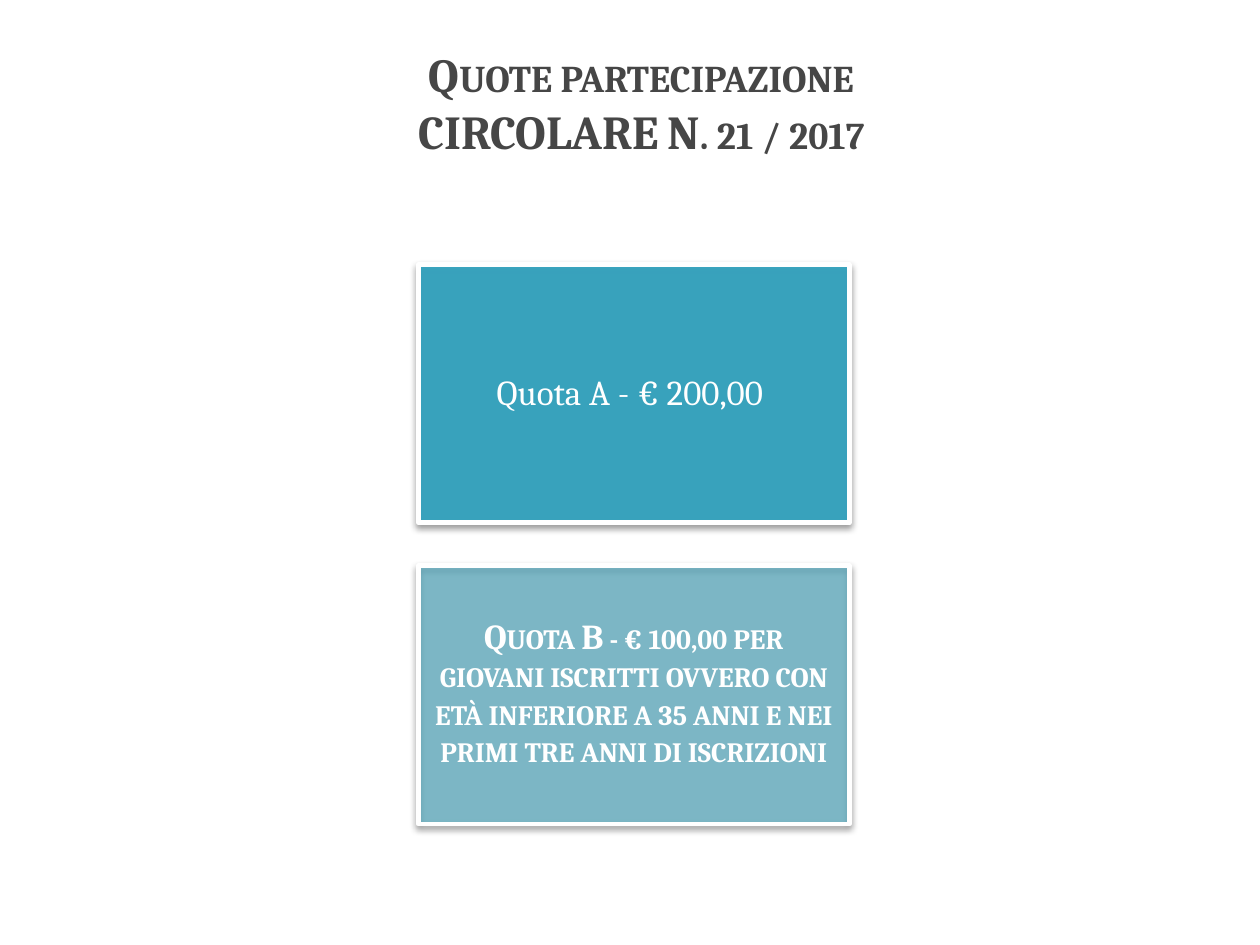
from lxml.etree import SubElement
from pptx import Presentation
from pptx.dml.color import RGBColor
from pptx.enum.shapes import MSO_SHAPE
from pptx.enum.text import MSO_ANCHOR, PP_ALIGN
from pptx.oxml.ns import qn
from pptx.util import Inches, Pt

COLORS = {"title": "464646", "card": "2DA2BF", "white": "FFFFFF", "shadow": "000000"}


def format_text(frame, size, color, small_caps):
    """Centre the text in Cambria; small caps text is also bold."""
    for para in frame.paragraphs:
        para.alignment = PP_ALIGN.CENTER
        for span in para.runs:
            span.font.name = "Cambria"
            span.font.size = Pt(size)
            span.font.bold = small_caps
            span.font.color.rgb = RGBColor.from_string(COLORS[color])
            if small_caps:
                span.font._element.set("cap", "small")


def add_alpha(color_element, percent):
    SubElement(color_element, qn("a:alpha"), val=str(percent * 1000))


deck = Presentation()
deck.slide_width, deck.slide_height = Inches(10), Inches(7.5)
page = deck.slides.add_slide(deck.slide_layouts[5])

title = page.shapes.title
title.left, title.top = Inches(0.59), Inches(0.37)
title.width, title.height = Inches(9), Inches(0.94)
title.text_frame.text = "Quote partecipazione\vCIRCOLARE N. 21 / 2017"
title.text_frame.vertical_anchor = MSO_ANCHOR.BOTTOM
format_text(title.text_frame, 27, "title", True)

# Text, fill opacity in percent, small caps
cards = [
    ("Quota A - € 200,00 ", 90, False),
    ("Quota B - € 100,00 per giovani iscritti ovvero con età inferiore a 35 anni "
     "e nei primi tre anni di iscrizioni", 50, True),
]
for index, (text, opacity, small_caps) in enumerate(cards):
    place = (Inches(3.32), Inches(2.1 + 2.39 * index), Inches(3.42), Inches(2.05))
    card = page.shapes.add_shape(MSO_SHAPE.RECTANGLE, *place)
    card.fill.solid()
    card.fill.fore_color.rgb = RGBColor.from_string(COLORS["card"])
    properties = card._element.spPr
    add_alpha(properties.find(qn("a:solidFill")).find(qn("a:srgbClr")), opacity)
    card.line.color.rgb = RGBColor.from_string(COLORS["white"])
    card.line.width = Pt(2.75)

    card.shadow.inherit = False
    shadow = SubElement(
        properties.find(qn("a:effectLst")), qn("a:outerShdw"),
        blurRad=str(Pt(4)), dist=str(Pt(2)), dir="5400000", rotWithShape="0")
    add_alpha(SubElement(shadow, qn("a:srgbClr"), val=COLORS["shadow"]), 40)

    # A separate text box keeps the card's shadow off the letters
    frame = page.shapes.add_textbox(*place).text_frame
    frame.text = text
    frame.word_wrap = True
    frame.vertical_anchor = MSO_ANCHOR.MIDDLE
    frame.margin_left = frame.margin_right = Inches(0.1)
    frame.margin_top = frame.margin_bottom = Inches(0.08)
    frame.paragraphs[0].line_spacing = 0.9
    format_text(frame, 20, "white", small_caps)

deck.save("out.pptx")
